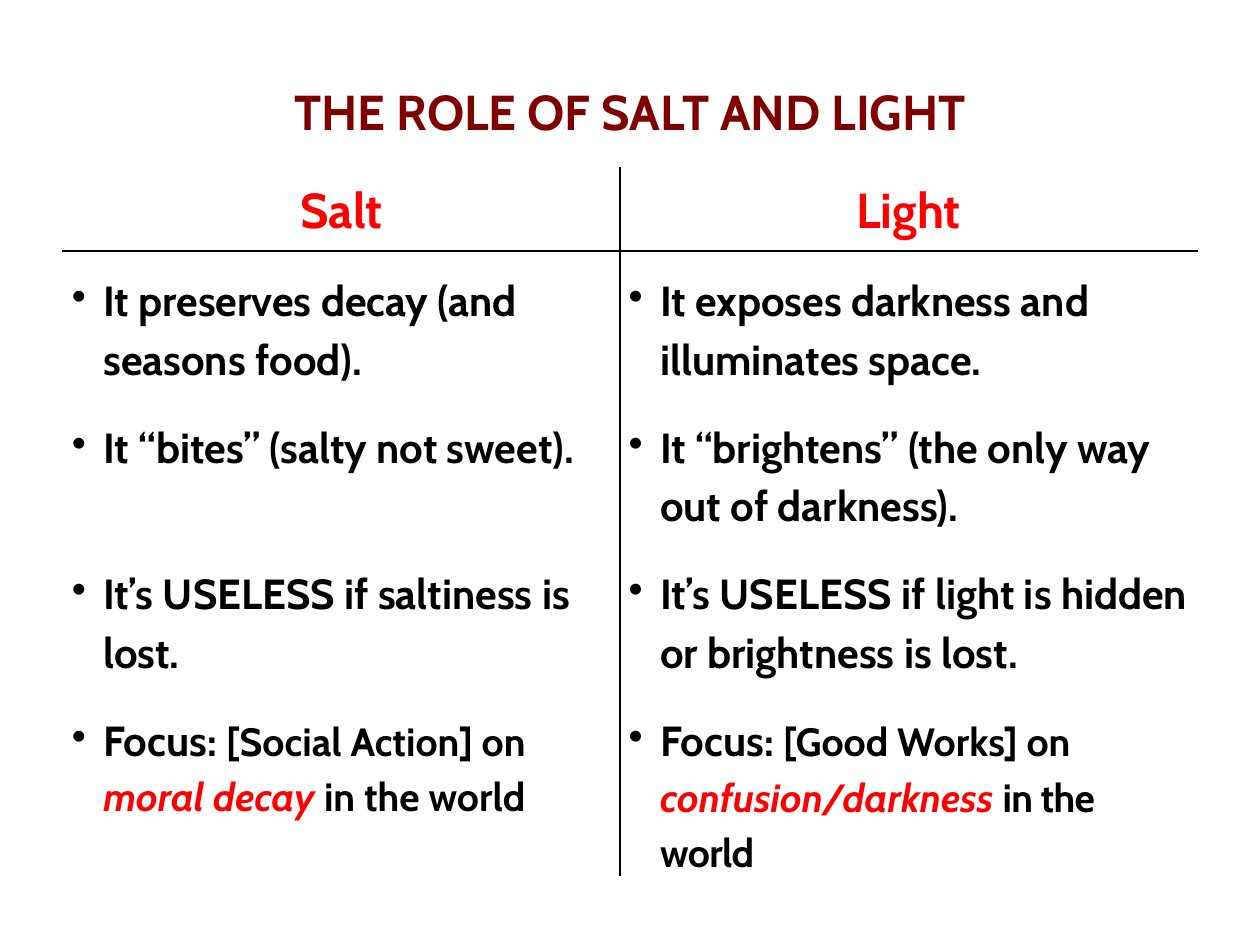
from dataclasses import dataclass

from lxml.etree import SubElement
from pptx import Presentation
from pptx.dml.color import RGBColor
from pptx.enum.text import MSO_ANCHOR, PP_ALIGN
from pptx.oxml.ns import qn
from pptx.util import Inches, Pt

W, H = Inches(10), Inches(7.5)
FONT = "Cabin"
MAROON, RED, BLACK = "800000", "FF0000", "000000"
COLS = (4.42, 4.58)
ROWS = (0.66, 4.5)
GAP = 16.7


@dataclass
class Run:
    text: str
    size: float = 24
    color: str = BLACK
    italic: bool = False
    spc: int = 0


@dataclass
class Bullet:
    runs: list[Run]
    before: float = GAP


@dataclass
class Column:
    head: str
    bullets: list[Bullet]


def focus(topic: str, target: str, spc: int = 0) -> Bullet:
    return Bullet([
        Run("Focus: "),
        Run(f"[{topic}] on ", 22.5),
        Run(f"{target} ", 22.5, RED, True),
        Run("in the world", 22.5, spc=spc),
    ])


COLUMNS = [
    Column("Salt", [
        Bullet([Run("It preserves decay (and seasons food).")], 0),
        Bullet([Run("It “bites” (salty not sweet).")]),
        Bullet([Run("It’s USELESS if saltiness is lost.")], 3 * GAP),
        focus("Social Action", "moral decay"),
    ]),
    Column("Light", [
        Bullet([Run("It exposes darkness and illuminates space.")], 0),
        Bullet([Run("It “brightens” (the only way out of darkness).")]),
        Bullet([Run("It’s USELESS if light is hidden or brightness is lost.")]),
        focus("Good Works", "confusion/darkness", -40),
    ]),
]


def rgb(color: str) -> RGBColor:
    return RGBColor.from_string(color)


def add_run(p, run: Run) -> None:
    r = p.add_run()
    r.text = run.text
    f = r.font
    f.name, f.size, f.bold, f.italic = FONT, Pt(run.size), True, run.italic
    f.color.rgb = rgb(run.color)
    if run.spc:
        r._r.get_or_add_rPr().set("spc", str(run.spc))


def set_bullet(p) -> None:
    pPr = p._p.get_or_add_pPr()
    pPr.set("marL", str(Inches(0.25)))
    pPr.set("indent", str(-Inches(0.25)))
    SubElement(pPr, qn("a:buChar")).set("char", "•")


def set_borders(cell, sides: str) -> None:
    tcPr = cell._tc.get_or_add_tcPr()
    for side in sides:
        ln = SubElement(tcPr, qn(f"a:ln{side}"), w=str(Pt(1)))
        fill = SubElement(ln, qn("a:solidFill"))
        SubElement(fill, qn("a:srgbClr"), val=BLACK)


def format_cell(cell, sides: str) -> None:
    set_borders(cell, sides)
    cell.fill.background()
    cell.margin_left = cell.margin_right = Inches(0.07)
    cell.margin_top = cell.margin_bottom = 0


def fill_head(cell, text: str) -> None:
    cell.vertical_anchor = MSO_ANCHOR.BOTTOM
    cell.margin_bottom = Inches(0.08)
    p = cell.text_frame.paragraphs[0]
    p.alignment, p.line_spacing = PP_ALIGN.CENTER, 1.15
    add_run(p, Run(text, 28, RED))


def fill_list(cell, bullets: list[Bullet]) -> None:
    cell.margin_top = Inches(0.14)
    tf = cell.text_frame
    for i, bullet in enumerate(bullets):
        p = tf.add_paragraph() if i else tf.paragraphs[0]
        set_bullet(p)
        p.line_spacing, p.space_before = 1.15, Pt(bullet.before)
        for run in bullet.runs:
            add_run(p, run)


def add_title(s, text: str) -> None:
    sp = s.shapes.title
    sp.left, sp.top = int(W / 30), int(H * 0.056)
    sp.width, sp.height = int(W * 28 / 30), int(H * 0.123)
    tf = sp.text_frame
    tf.vertical_anchor = MSO_ANCHOR.MIDDLE
    p = tf.paragraphs[0]
    p.alignment = PP_ALIGN.CENTER
    add_run(p, Run(text, 28, MAROON))


def add_comparison(s, columns: list[Column]) -> None:
    frame = s.shapes.add_table(
        len(ROWS), len(COLS), int(W * 0.05), int(H * 0.1775),
        Inches(sum(COLS)), Inches(sum(ROWS)))
    table = frame.table
    table.first_row = table.horz_banding = False
    for col, width in zip(table.columns, COLS):
        col.width = Inches(width)
    for row, height in zip(table.rows, ROWS):
        row.height = Inches(height)
    for c, (column, side) in enumerate(zip(columns, "RL")):
        head, body = table.cell(0, c), table.cell(1, c)
        format_cell(head, side + "B")
        format_cell(body, side + "T")
        fill_head(head, column.head)
        fill_list(body, column.bullets)


def main() -> None:
    prs = Presentation()
    prs.slide_width, prs.slide_height = W, H
    s = prs.slides.add_slide(prs.slide_layouts[5])
    add_title(s, "THE ROLE OF SALT AND LIGHT")
    add_comparison(s, COLUMNS)
    prs.save("out.pptx")


if __name__ == "__main__":
    main()
